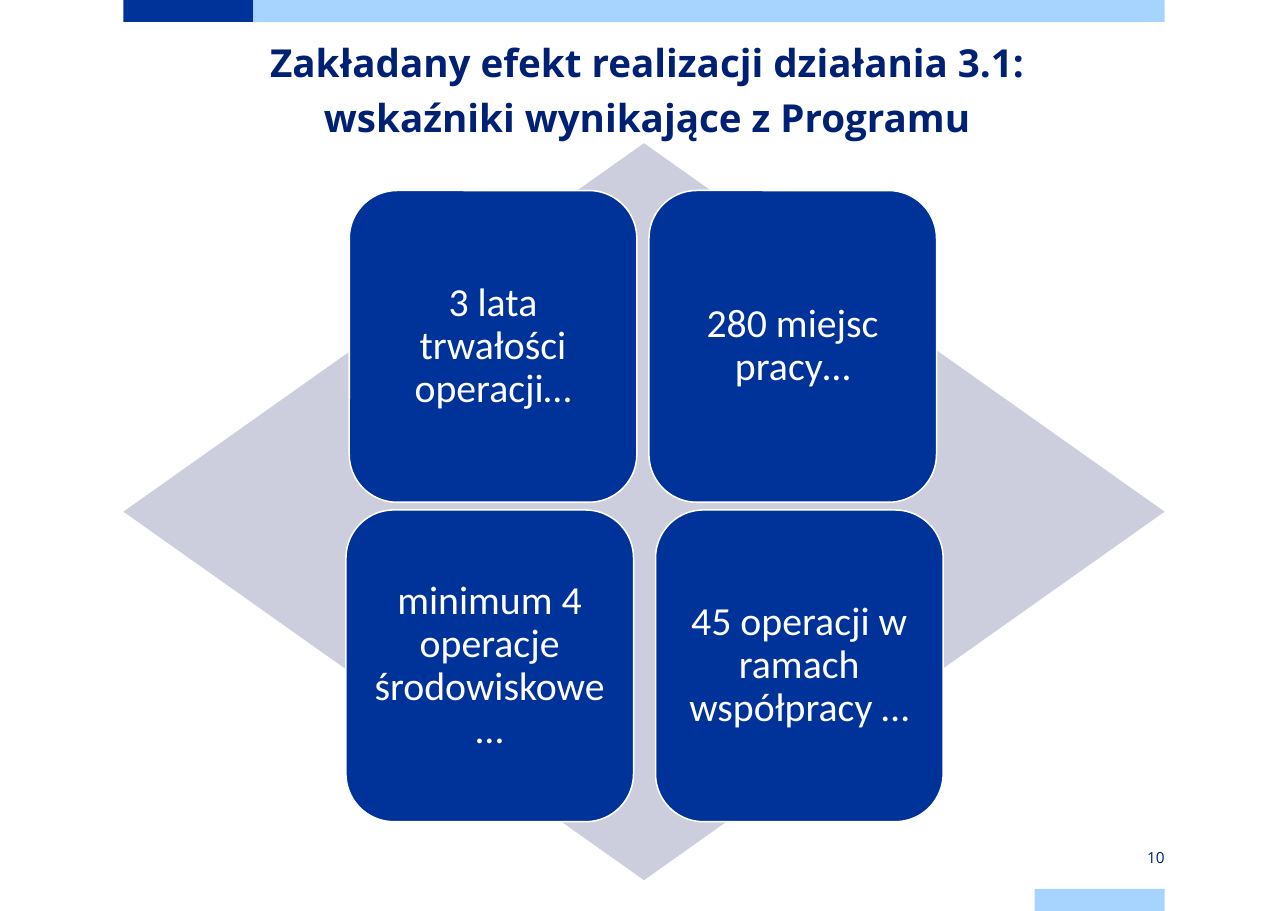
import pptx
import pptx.dml.color
import pptx.enum.shapes
import pptx.enum.text
import pptx.util

Inches = pptx.util.Inches
Pt = pptx.util.Pt
RGBColor = pptx.dml.color.RGBColor
Shape = pptx.enum.shapes.MSO_SHAPE
Align = pptx.enum.text.PP_ALIGN
Anchor = pptx.enum.text.MSO_ANCHOR

NAVY = RGBColor(0x00, 0x20, 0x73)
BLUE = RGBColor(0x00, 0x33, 0x99)
LIGHT_BLUE = RGBColor(0xA6, 0xD3, 0xFF)
GREY = RGBColor(0xCC, 0xCE, 0xDE)
WHITE = RGBColor(0xFF, 0xFF, 0xFF)

LEFT, WIDTH = 1.12, 9.45
BAR_WIDTH, BAR_HEIGHT = 1.18, 0.2
CARD_WIDTH, CARD_HEIGHT = 2.61, 2.83

# Each row of cards: left and top within the diamond, gap between cards, texts
CARD_ROWS = [
    (2.05, 0.43, 0.11, ["3 lata trwałości operacji…", "280 miejsc pracy…"]),
    (2.02, 3.33, 0.2, ["minimum 4 operacje środowiskowe …",
                       "45 operacji w ramach współpracy …"]),
]


def add_filled_shape(page, kind, box, color):
    shape = page.shapes.add_shape(kind, *map(Inches, box))
    shape.shadow.inherit = False
    shape.fill.solid()
    shape.fill.fore_color.rgb = color
    shape.line.fill.background()
    return shape


def set_text(shape, text, font, size, color, align, anchor, inset_x, inset_y, bold=False):
    frame = shape.text_frame
    frame.word_wrap = True
    frame.auto_size = pptx.enum.text.MSO_AUTO_SIZE.NONE
    frame.vertical_anchor = anchor
    frame.margin_left = frame.margin_right = Inches(inset_x)
    frame.margin_top = frame.margin_bottom = Inches(inset_y)
    frame.text = text
    para = frame.paragraphs[0]
    para.alignment = align
    para.space_before = Pt(0)
    for target in [para, *para.runs]:
        target.font.name = font
        target.font.size = Pt(size)
        target.font.bold = bold
        target.font.color.rgb = color
    return para


def add_bars(page, left, width, page_height):
    right = left + width
    bars = [
        (left, 0, BAR_WIDTH, BLUE),
        (left + BAR_WIDTH, 0, width - BAR_WIDTH, LIGHT_BLUE),
        (right - BAR_WIDTH, page_height - BAR_HEIGHT, BAR_WIDTH, LIGHT_BLUE),
    ]
    for bar_left, top, bar_width, color in bars:
        add_filled_shape(page, Shape.RECTANGLE, (bar_left, top, bar_width, BAR_HEIGHT), color)


def add_title(page, left, top, width, height):
    title = page.shapes.title
    title.left, title.top = Inches(left), Inches(top)
    title.width, title.height = Inches(width), Inches(height)
    para = set_text(
        title,
        "Zakładany efekt realizacji działania 3.1:\vwskaźniki wynikające z Programu",
        "Open Sans", 25.2, NAVY, Align.CENTER, Anchor.TOP, 0, 0, bold=True)
    para.line_spacing = Pt(36)


def add_indicator_matrix(page, left, top, width, height):
    add_filled_shape(page, Shape.DIAMOND, (left, top, width, height), GREY)
    for row_left, row_top, gap, texts in CARD_ROWS:
        for column, text in enumerate(texts):
            card_left = left + row_left + column * (CARD_WIDTH + gap)
            card = add_filled_shape(
                page, Shape.ROUNDED_RECTANGLE,
                (card_left, top + row_top, CARD_WIDTH, CARD_HEIGHT), BLUE)
            card.line.color.rgb = WHITE
            card.line.width = Pt(1)
            para = set_text(card, text, "Calibri", 26, WHITE,
                            Align.CENTER, Anchor.MIDDLE, 0.11, 0.11)
            para.line_spacing = 0.9


def add_page_number(page, left, top, width, height):
    box = page.shapes.add_textbox(*map(Inches, (left, top, width, height)))
    set_text(box, "10", "Open Sans", 10, NAVY, Align.RIGHT, Anchor.MIDDLE, 0, 0.08)


def main():
    deck = pptx.Presentation()
    deck.slide_width, deck.slide_height = Inches(11.69), Inches(8.27)
    page = deck.slides.add_slide(deck.slide_layouts[5])

    add_bars(page, LEFT, WIDTH, 8.27)
    add_title(page, 1.15, 0.27, WIDTH, 1.18)
    add_indicator_matrix(page, LEFT, 1.3, WIDTH, 6.69)
    add_page_number(page, LEFT + WIDTH - BAR_WIDTH, 7.68, BAR_WIDTH, 0.2)

    deck.save("out.pptx")


if __name__ == "__main__":
    main()
